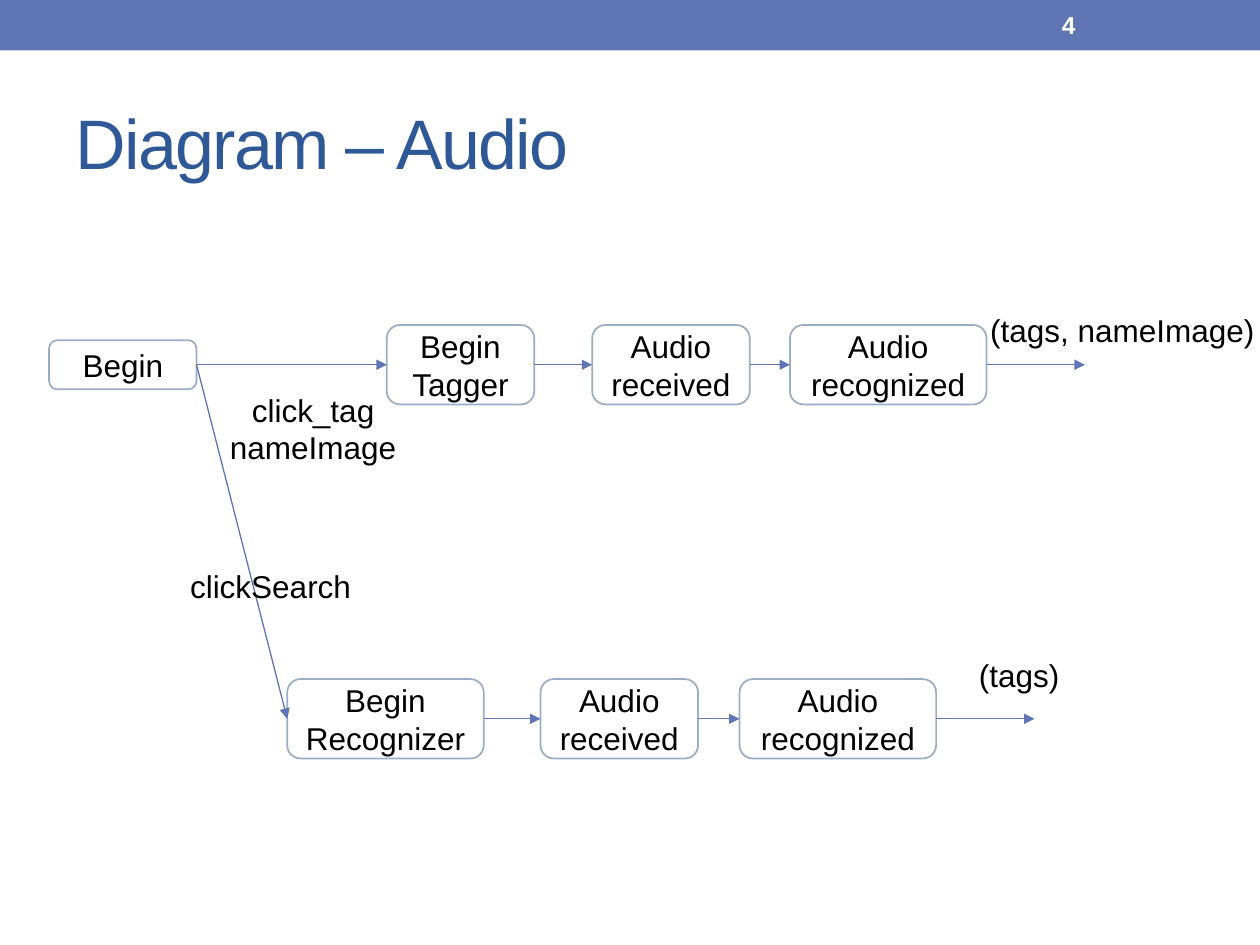
from lxml import etree
from pptx import Presentation
from pptx.dml.color import RGBColor
from pptx.enum import shapes, text
from pptx.oxml.ns import qn
from pptx.util import Inches, Pt

COLORS = {"bar": "6076B4", "title": "2F5897", "border": "9BADC4",
          "text": "000000", "light": "FFFFFF"}
TOP, LEFT, RIGHT = 0, 1, 3
STATE_HEIGHT = 0.63
ARROW_OUT = 0.78


def rgb(name):
    return RGBColor.from_string(COLORS[name])


def set_font(p, size=18, color="text", bold=False):
    p.font.name = "Arial"
    p.font.size = Pt(size)
    p.font.bold = bold
    p.font.color.rgb = rgb(color)


def add_bar(s):
    sp = s.shapes.add_shape(shapes.MSO_SHAPE.RECTANGLE, 0, 0, Inches(10), Inches(0.4))
    sp.shadow.inherit = False
    sp.fill.solid()
    sp.fill.fore_color.rgb = rgb("bar")
    sp.line.fill.background()


def add_title(s, title):
    sp = s.shapes.title
    sp.left, sp.top, sp.width, sp.height = map(Inches, (0.5, 0.58, 9, 1.08))
    tf = sp.text_frame
    tf.text = title
    tf.vertical_anchor = text.MSO_ANCHOR.MIDDLE
    p = tf.paragraphs[0]
    p.alignment = text.PP_ALIGN.LEFT
    set_font(p, 40, "title")
    p.runs[0].font._element.set("spc", "-100")


def add_page_number(s, number):
    tf = s.shapes.add_textbox(*map(Inches, (8.33, 0.02, 1.17, 0.36))).text_frame
    tf.word_wrap = True
    tf.vertical_anchor = text.MSO_ANCHOR.MIDDLE
    tf.text = number
    set_font(tf.paragraphs[0], 14, "light", True)


def add_state(s, name, left, top, width, height=STATE_HEIGHT):
    sp = s.shapes.add_shape(shapes.MSO_SHAPE.ROUNDED_RECTANGLE,
                            *map(Inches, (left, top, width, height)))
    sp.shadow.inherit = False
    sp.fill.background()
    sp.line.color.rgb = rgb("border")
    sp.line.width = Pt(1)
    tf = sp.text_frame
    tf.word_wrap = True
    tf.vertical_anchor = text.MSO_ANCHOR.MIDDLE
    tf.text = name
    p = tf.paragraphs[0]
    p.alignment = text.PP_ALIGN.CENTER
    set_font(p)
    return sp


def add_arrow(s, source, target=None):
    """Join two states, or lead out of the source when there is no target."""
    x, y = source.left + source.width, source.top + source.height // 2
    c = s.shapes.add_connector(shapes.MSO_CONNECTOR.STRAIGHT,
                               x, y, x + Inches(ARROW_OUT), y)
    c.begin_connect(source, RIGHT)
    if target is not None:
        c.end_connect(target, LEFT)
    c.line.color.rgb = rgb("bar")
    c.line.width = Pt(0.75)
    etree.SubElement(c.line._get_or_add_ln(), qn("a:tailEnd"), type="triangle")
    etree.SubElement(c._element.spPr, qn("a:effectLst"))


def add_label(s, lines, left, top, width, height=0.4, align=text.PP_ALIGN.LEFT):
    tf = s.shapes.add_textbox(*map(Inches, (left, top, width, height))).text_frame
    tf.word_wrap = False
    tf.auto_size = text.MSO_AUTO_SIZE.SHAPE_TO_FIT_TEXT
    tf.text = "\n".join(lines)
    for p in tf.paragraphs:
        p.alignment = align
        set_font(p)


def add_flow(s, start, top, states):
    """Draw a row of states, linked from start and ending in an open arrow."""
    previous = start
    for name, left, width in states:
        state = add_state(s, name, left, top, width)
        add_arrow(s, previous, state)
        previous = state
    add_arrow(s, previous)


def main():
    prs = Presentation()
    prs.slide_width, prs.slide_height = Inches(10), Inches(7.5)
    s = prs.slides.add_slide(prs.slide_layouts[5])
    add_bar(s)
    add_title(s, "Diagram – Audio")
    add_page_number(s, "4")

    begin = add_state(s, "Begin", 0.39, 2.7, 1.17, 0.39)
    add_flow(s, begin, 2.58, [("Begin Tagger", 3.07, 1.17),
                              ("Audio received", 4.7, 1.25),
                              ("Audio recognized", 6.27, 1.56)])
    add_flow(s, begin, 5.39, [("Begin Recognizer", 2.28, 1.56),
                              ("Audio received", 4.29, 1.25),
                              ("Audio recognized", 5.87, 1.56)])

    add_label(s, ["click_tag", "nameImage"], 1.72, 3.05, 1.53, 0.71,
              text.PP_ALIGN.CENTER)
    add_label(s, ["(tags, nameImage)"], 7.76, 2.42, 2.32)
    add_label(s, ["(tags)"], 7.67, 5.16, 0.85)
    add_label(s, ["clickSearch"], 1.41, 4.45, 1.49)
    prs.save("out.pptx")


if __name__ == "__main__":
    main()
